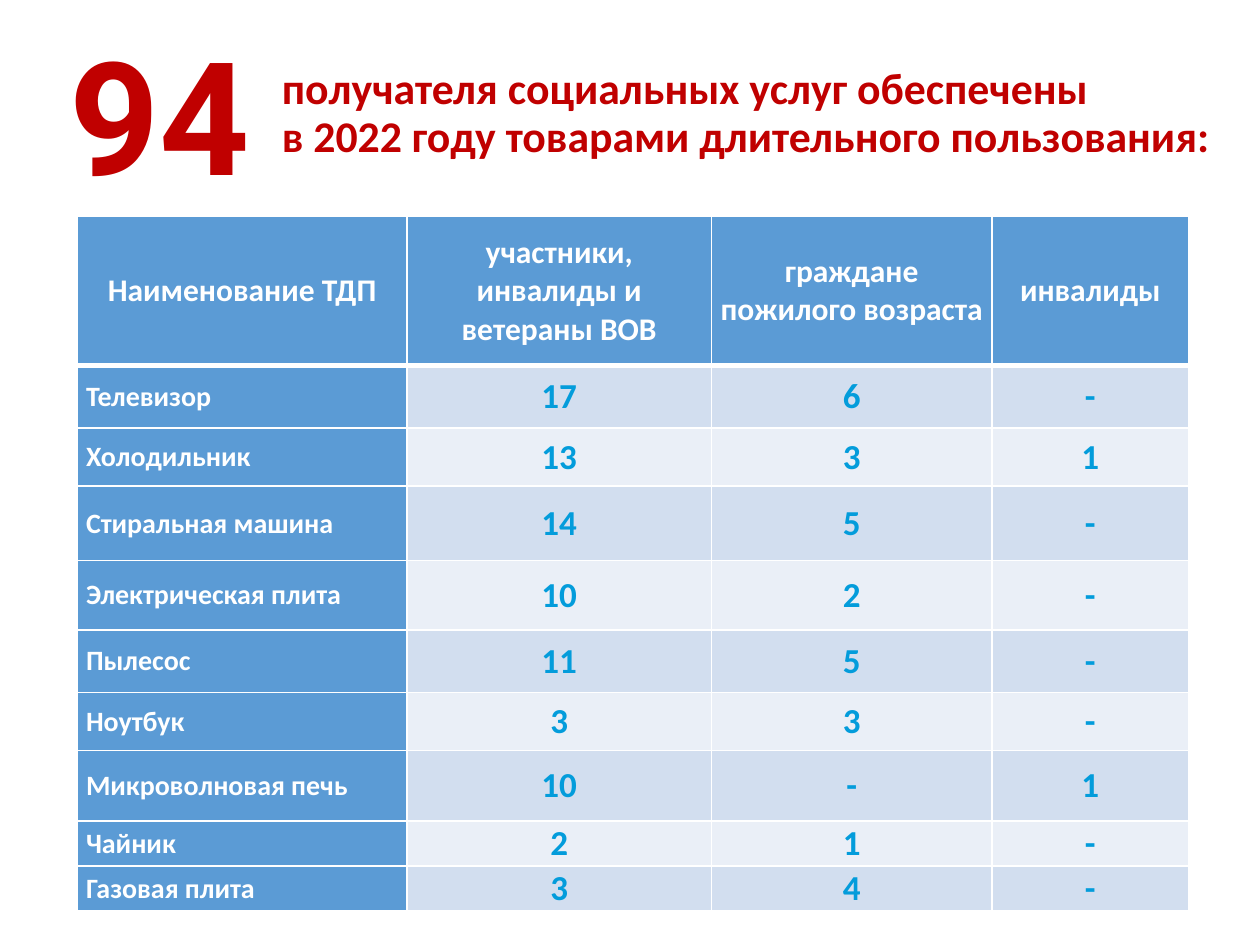
from pptx import Presentation
from pptx.dml.color import RGBColor
from pptx.enum.text import MSO_ANCHOR as Anchor, PP_ALIGN as Align
from pptx.oxml.ns import qn
from pptx.util import Pt
from lxml.etree import SubElement

WHITE = RGBColor(0xFF, 0xFF, 0xFF)
RED = RGBColor(0xC0, 0x00, 0x00)
BLUE = RGBColor(0x5B, 0x9B, 0xD5)
CYAN = RGBColor(0x03, 0x9C, 0xDB)
BANDS = [RGBColor(0xD2, 0xDE, 0xEF), RGBColor(0xEA, 0xEF, 0xF7)]


def write(frame, text, size, color, font="Calibri", align=Align.LEFT,
          spacing=None, before=None):
    """Fill a text frame with bold text, one paragraph per line."""
    frame.word_wrap = True
    for i, line in enumerate(text.split("\n")):
        para = frame.add_paragraph() if i else frame.paragraphs[0]
        para.alignment = align
        para.line_spacing = spacing
        para.space_before = before
        run = para.add_run()
        run.text = line
        run.font.name = font
        run.font.size = Pt(size)
        run.font.bold = True
        run.font.color.rgb = color


def set_borders(cell, **widths):
    """Draw white cell borders, in points, keyed by side: L, R, T, B."""
    props = cell._tc.get_or_add_tcPr()
    for side, width in widths.items():
        line = SubElement(props, qn(f"a:ln{side}"), w=str(Pt(width)))
        fill = SubElement(line, qn("a:solidFill"))
        SubElement(fill, qn("a:srgbClr"), val=str(WHITE))


prs = Presentation()
prs.slide_width, prs.slide_height = Pt(720), Pt(540)
slide = prs.slides.add_slide(prs.slide_layouts[6])

# Goods by group of recipients
goods = [
    ("Наименование ТДП", "участники, инвалиды и ветераны ВОВ",
     "граждане пожилого возраста", "инвалиды"),
    ("Телевизор", "17", "6", "-"),
    ("Холодильник", "13", "3", "1"),
    ("Стиральная машина", "14", "5", "-"),
    ("Электрическая плита", "10", "2", "-"),
    ("Пылесос", "11", "5", "-"),
    ("Ноутбук", "3", "3", "-"),
    ("Микроволновая печь", "10", "-", "1"),
    ("Чайник", "2", "1", "-"),
    ("Газовая плита", "3", "4", "-"),
]
col_widths = [188.5, 173.8, 160.5, 112.2]
row_heights = [85.5, 35.8, 33.2, 42.6, 39.5, 35.8, 33.2, 40.2, 25.8, 25.8]

table = slide.shapes.add_table(
    len(goods), len(col_widths), Pt(44.2), Pt(123.4),
    Pt(sum(col_widths)), Pt(sum(row_heights))).table
table.first_col = True
for column, width in zip(table.columns, col_widths):
    column.width = Pt(width)
for row, height in zip(table.rows, row_heights):
    row.height = Pt(height)

for r, entries in enumerate(goods):
    for c, entry in enumerate(entries):
        cell = table.cell(r, c)
        cell.vertical_anchor = Anchor.MIDDLE
        cell.margin_left = cell.margin_right = Pt(5)
        cell.margin_top = cell.margin_bottom = 0
        set_borders(cell, L=1, R=1, T=3 if r == 1 else 1, B=3 if r == 0 else 1)
        cell.fill.solid()
        if r == 0:
            fill, size, color, align = BLUE, 18, WHITE, Align.CENTER
        elif c == 0:
            fill, size, color, align = BLUE, 16, WHITE, Align.LEFT
        else:
            fill, size, color, align = BANDS[(r - 1) % 2], 20, CYAN, Align.CENTER
        cell.fill.fore_color.rgb = fill
        write(cell.text_frame, entry, size, color, align=align)

# Total number of recipients
total = slide.shapes.add_textbox(Pt(3.6), Pt(19.4), Pt(175), Pt(103.7)).text_frame
total.vertical_anchor = Anchor.MIDDLE
write(total, "94", 90, RED, font="Roboto", align=Align.CENTER, spacing=0.9)

# Heading
heading = slide.shapes.add_textbox(Pt(154), Pt(41), Pt(550), Pt(62)).text_frame
write(heading, "получателя социальных услуг обеспечены\n"
      "в 2022 году товарами длительного пользования:",
      25, RED, spacing=Pt(20), before=Pt(7.5))

prs.save("out.pptx")
